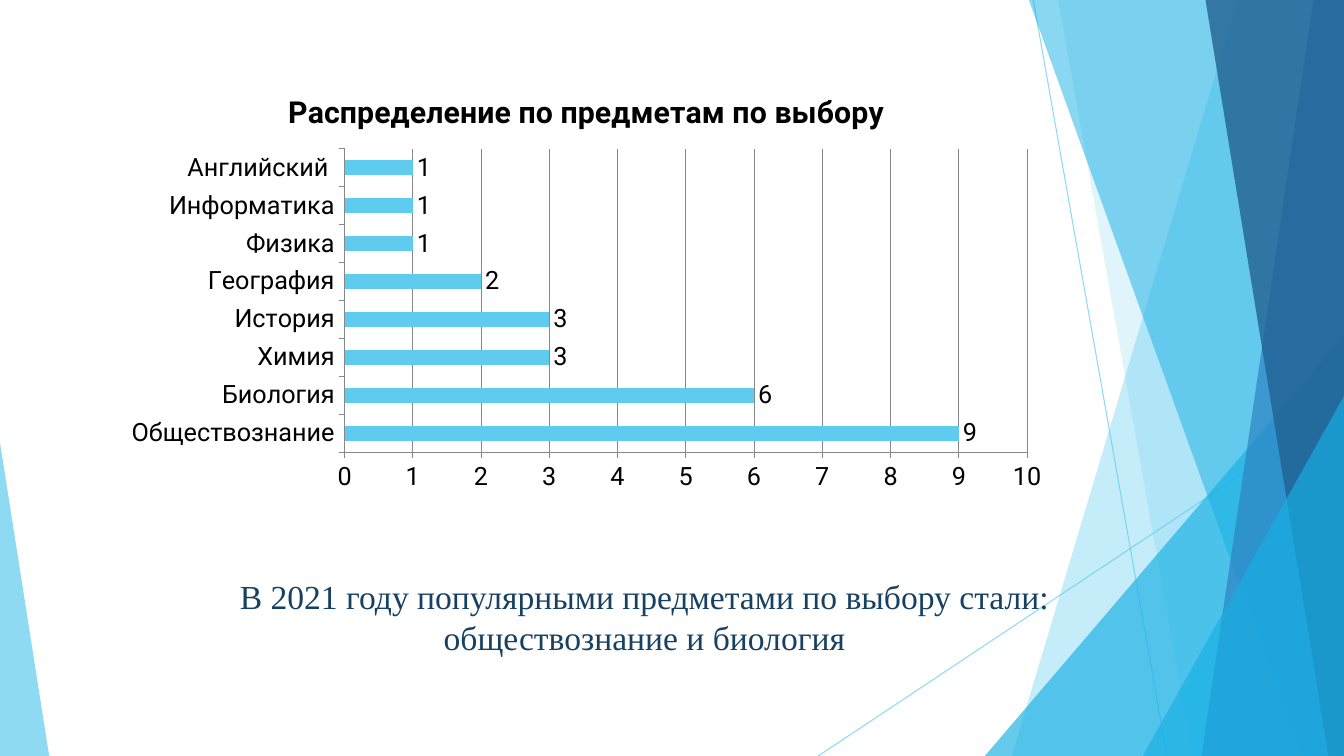
from dataclasses import dataclass

from lxml import etree
from pptx import Presentation
from pptx.chart.data import CategoryChartData
from pptx.dml.color import RGBColor
from pptx.enum.chart import XL_CHART_TYPE, XL_LABEL_POSITION, XL_TICK_MARK
from pptx.enum.shapes import MSO_CONNECTOR, MSO_SHAPE
from pptx.enum.text import MSO_AUTO_SIZE, PP_ALIGN
from pptx.oxml.ns import qn
from pptx.util import Cm, Pt

BAR = XL_CHART_TYPE.BAR_CLUSTERED
OUTSIDE_END = XL_LABEL_POSITION.OUTSIDE_END
TICK_OUT = XL_TICK_MARK.OUTSIDE
STRAIGHT = MSO_CONNECTOR.STRAIGHT
TRIANGLE = MSO_SHAPE.ISOSCELES_TRIANGLE
SHAPE_TO_FIT = MSO_AUTO_SIZE.SHAPE_TO_FIT_TEXT
CENTER = PP_ALIGN.CENTER

SLIDE_WIDTH, SLIDE_HEIGHT = 33.87, 19.05


@dataclass(frozen=True)
class Theme:
    """Colours, fonts and type sizes of the slide."""
    sky: str = "5FCBEF"
    azure: str = "17B0E4"
    blue: str = "2E83C3"
    navy: str = "226292"
    caption: str = "174162"
    chart_text: str = "000000"
    grid: str = "878787"
    chart_font: str = "Roboto"
    caption_font: str = "Times New Roman"
    chart_title_size: float = 21.6
    chart_size: float = 18
    caption_size: float = 24
    hairline: float = 0.75


THEME = Theme()

CHART_TITLE = "Распределение по предметам по выбору"
SUBJECTS = {
    "Обществознание": 9, "Биология": 6, "Химия": 3, "История": 3,
    "География": 2, "Физика": 1, "Информатика": 1, "Английский ": 1,
}
CAPTION = "В 2021 году популярными предметами по выбору стали: обществознание и биология"


def set_opacity(color_format, percent):
    """Make a solid colour partly transparent."""
    color = color_format._xFill.find(qn("a:srgbClr"))
    etree.SubElement(color, qn("a:alpha")).set("val", str(percent * 1000))


def paint(facet, color, opacity):
    """Give a facet a translucent fill with no outline or shadow."""
    facet.shadow.inherit = False
    facet.fill.solid()
    facet.fill.fore_color.rgb = RGBColor.from_string(color)
    set_opacity(facet.fill.fore_color, opacity)
    facet.line.fill.background()


def add_ray(group, start, end):
    """Draw a thin translucent line between two points."""
    ray = group.shapes.add_connector(STRAIGHT, *map(Cm, start + end))
    ray.line.width = Pt(THEME.hairline)
    ray.line.color.rgb = RGBColor.from_string(THEME.sky)
    set_opacity(ray.line.color, 70)
    etree.SubElement(ray._element.spPr, qn("a:effectLst"))


def add_band(group, right, bottom, top_x, bottom_x, color, opacity):
    """Fill the area between a slanted edge and the right side."""
    outline = group.shapes.build_freeform(Cm(top_x), 0)
    corners = [(right, 0), (right, bottom), (bottom_x, bottom)]
    outline.add_line_segments([(Cm(x), Cm(y)) for x, y in corners])
    paint(outline.convert_to_shape(), color, opacity)


def add_corner(group, left, top, right, bottom, apex, color, opacity):
    """Fill a right triangle standing on the bottom edge."""
    corner = group.shapes.add_shape(
        TRIANGLE, Cm(left), Cm(top), Cm(right - left), Cm(bottom - top))
    corner.adjustments[0] = apex
    paint(corner, color, opacity)


def add_facets(slide, right, bottom):
    """Build the faceted decoration along the slide's sides."""
    group = slide.shapes.add_group_shape()
    add_ray(group, (26.04, 0), (29.41, bottom))
    add_ray(group, (right, 10.24), (20.62, bottom))
    add_band(group, right, bottom, 31.19, 25.5, THEME.sky, 36)
    add_band(group, right, bottom, 26.67, 30.05, THEME.sky, 20)
    add_corner(group, 24.82, 8.46, right, bottom, 1, THEME.azure, 66)
    add_band(group, right, bottom, 25.93, 32.79, THEME.azure, 50)
    add_band(group, right, bottom, 33.1, 30.28, THEME.blue, 70)
    add_band(group, right, bottom, 30.38, 33.48, THEME.navy, 80)
    add_corner(group, 28.8, 9.98, right, bottom, 1, THEME.azure, 66)
    add_corner(group, 0, 11.15, 1.24, bottom, 0, THEME.sky, 70)


def add_caption(slide, left, top, width, height):
    """Place the conclusion below the chart."""
    caption = slide.shapes.add_textbox(Cm(left), Cm(top), Cm(width), Cm(height))
    frame = caption.text_frame
    frame.word_wrap = True
    frame.auto_size = SHAPE_TO_FIT
    frame.text = CAPTION
    conclusion = frame.paragraphs[0]
    conclusion.alignment = CENTER
    font = conclusion.runs[0].font
    font.name = THEME.caption_font
    font.size = Pt(THEME.caption_size)
    font.color.rgb = RGBColor.from_string(THEME.caption)


def style_chart_font(font, size):
    """Apply the chart's typeface, colour and size."""
    font.name = THEME.chart_font
    font.size = Pt(size)
    font.color.rgb = RGBColor.from_string(THEME.chart_text)


def style_rule(line):
    """Apply the thin grey line of axes and grid."""
    line.width = Pt(THEME.hairline)
    line.color.rgb = RGBColor.from_string(THEME.grid)


def add_subject_chart(slide, left, top, width, height):
    """Place the bar chart of elective subjects."""
    data = CategoryChartData()
    data.categories = SUBJECTS.keys()
    data.add_series(CHART_TITLE, SUBJECTS.values())
    chart = slide.shapes.add_chart(
        BAR, Cm(left), Cm(top), Cm(width), Cm(height), data).chart
    style_chart_font(chart.font, THEME.chart_size)
    chart.has_legend = False

    chart.has_title = True
    chart.chart_title.include_in_layout = False
    heading = chart.chart_title.text_frame
    heading.text = CHART_TITLE
    heading_font = heading.paragraphs[0].runs[0].font
    style_chart_font(heading_font, THEME.chart_title_size)
    heading_font.bold = True

    for axis in (chart.category_axis, chart.value_axis):
        axis.major_tick_mark = TICK_OUT
        style_rule(axis.format.line)
    chart.category_axis.has_major_gridlines = False
    counts = chart.value_axis
    counts.minimum_scale, counts.maximum_scale, counts.major_unit = 0, 10, 1
    counts.has_major_gridlines = True
    style_rule(counts.major_gridlines.format.line)

    plot = chart.plots[0]
    plot.gap_width = 150
    plot.vary_by_categories = False
    plot.has_data_labels = True
    plot.data_labels.show_value = True
    plot.data_labels.position = OUTSIDE_END
    style_chart_font(plot.data_labels.font, THEME.chart_size)
    bars = plot.series[0].format.fill
    bars.solid()
    bars.fore_color.rgb = RGBColor.from_string(THEME.sky)


def main():
    """Build and save the slide."""
    deck = Presentation()
    deck.slide_width, deck.slide_height = Cm(SLIDE_WIDTH), Cm(SLIDE_HEIGHT)
    slide = deck.slides.add_slide(deck.slide_layouts[6])
    add_facets(slide, SLIDE_WIDTH, SLIDE_HEIGHT)
    add_caption(slide, 3.3, 14.4, 25.88, 2.31)
    add_subject_chart(slide, 2.84, 1.83, 23.88, 10.77)
    deck.save("out.pptx")


if __name__ == "__main__":
    main()
